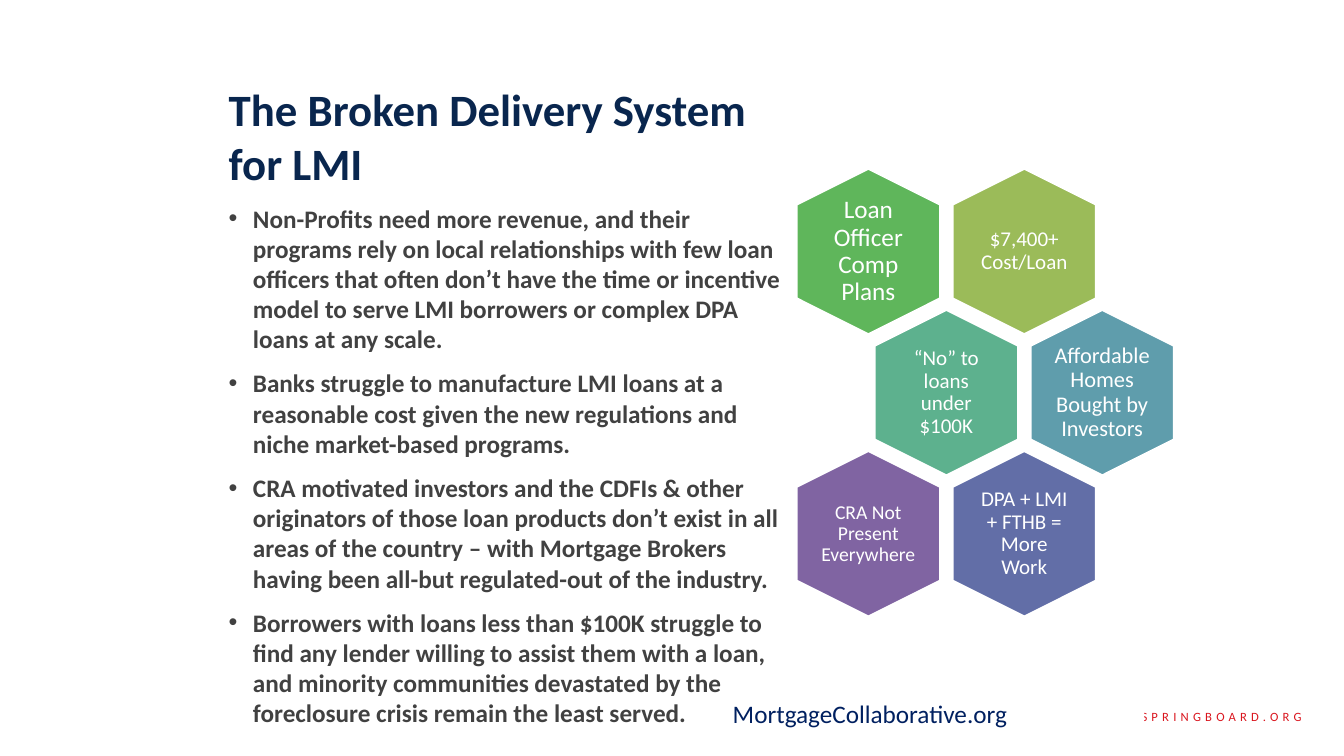
from dataclasses import dataclass

from lxml import etree
from pptx import Presentation
from pptx import util as u
from pptx.dml.color import RGBColor
from pptx.enum import shapes, text
from pptx.oxml.ns import qn

WIDTH, HEIGHT = u.Inches(13.33), u.Inches(7.5)


@dataclass(frozen=True)
class Theme:
    font: str = "Calibri"
    white: str = "FFFFFF"
    navy: str = "09264E"
    gray: str = "414141"
    red: str = "DA151E"
    blue: str = "002060"
    title: int = 32
    body: int = 18
    address: int = 9


THEME = Theme()
TITLE = "The Broken Delivery System for LMI"
POINTS = [
    "Non-Profits need more revenue, and their programs rely on local relationships with few loan officers "
    "that often don’t have the time or incentive model to serve LMI borrowers or complex DPA loans at any scale.",
    "Banks struggle to manufacture LMI loans at a reasonable cost given the new regulations "
    "and niche market-based programs.",
    "CRA motivated investors and the CDFIs & other originators of those loan products don’t exist in all areas "
    "of the country – with Mortgage Brokers having been all-but regulated-out of the industry.",
    "Borrowers with loans less than $100K struggle to find any lender willing to assist them with a loan, "
    "and minority communities devastated by the foreclosure crisis remain the least served.",
]
HEXAGONS = [
    (0, 0, "Loan Officer Comp Plans", 18, "5FB65B", 0),
    (2, 0, "$7,400+ Cost/Loan", 15, "9BBB59", 0.06),
    (1, 1, "“No” to loans under $100K", 15, "5DB18E", 0.06),
    (3, 1, "Affordable Homes Bought by Investors", 16, "5F9DAC", 0),
    (0, 2, "CRA Not Present Everywhere", 14, "8064A2", 0),
    (2, 2, "DPA + LMI + FTHB = More Work", 15, "626EA7", 0.06),
]


def area(left, top, width, height):
    return [round(share * side / 100) for share, side in
            zip((left, top, width, height), (WIDTH, HEIGHT) * 2)]


def centered(x, y, width, height):
    return area(x - width / 2, y - height / 2, width, height)


def add_bullet(para, indent=0.24):
    props = para._p.get_or_add_pPr()
    props.set("marL", str(u.Inches(indent)))
    props.set("indent", str(-u.Inches(indent)))
    font = etree.SubElement(props, qn("a:buFont"))
    font.set("typeface", "Arial")
    etree.SubElement(props, qn("a:buChar")).set("char", "•")


def write(para, words, size, color, bold=False, bullet=False, align=text.PP_ALIGN.LEFT,
          before=0, line=None, tracking=None):
    para.alignment = align
    para.space_before = u.Pt(before)
    if line:
        para.line_spacing = line
    if bullet:
        add_bullet(para)
    span = para.add_run()
    span.text = words
    span.font.name = THEME.font
    span.font.size = u.Pt(size)
    span.font.bold = bold
    span.font.color.rgb = RGBColor.from_string(color)
    if tracking:
        span._r.get_or_add_rPr().set("spc", str(tracking * 100))


def add_text(page, frame, inset=None, anchor=text.MSO_ANCHOR.TOP):
    content = page.shapes.add_textbox(*frame).text_frame
    content.word_wrap = True
    content.vertical_anchor = anchor
    if inset is not None:
        content.margin_left = content.margin_right = u.Inches(inset)
        content.margin_top = content.margin_bottom = u.Inches(inset)
    return content


def add_panel(page, kind, frame, fill):
    panel = page.shapes.add_shape(kind, *frame)
    panel.shadow.inherit = False
    panel.fill.solid()
    panel.fill.fore_color.rgb = RGBColor.from_string(fill)
    panel.line.fill.background()
    return panel


def add_hexagon(page, column, row, words, size, fill, inset):
    x, y = 64.61 + 5.8 * column, 33.27 + 18.67 * row
    hexagon = add_panel(page, shapes.MSO_SHAPE.HEXAGON, centered(x, y, 12.38, 19.07), fill)
    hexagon.adjustments[0] = 0.25
    hexagon.rotation = 90
    hexagon.line.color.rgb = RGBColor.from_string(THEME.white)
    hexagon.line.width = u.Pt(2)
    label = add_text(page, centered(x, y, 7.43, 15.07), inset, text.MSO_ANCHOR.MIDDLE)
    write(label.paragraphs[0], words, size, THEME.white, align=text.PP_ALIGN.CENTER, line=0.9)


def add_body(page):
    body = add_text(page, area(16.28, 10.13, 42.68, 81.33))
    write(body.paragraphs[0], TITLE, THEME.title, THEME.navy, bold=True)
    for point in POINTS:
        write(body.add_paragraph(), point, THEME.body, THEME.gray, bold=True, bullet=True, before=9.8)


def add_footer(page):
    panel = add_panel(page, shapes.MSO_SHAPE.RECTANGLE, area(53.78, 91.73, 31.35, 5.33), THEME.white)
    panel.text_frame.word_wrap = True
    write(panel.text_frame.paragraphs[0], "MortgageCollaborative.org", THEME.body, THEME.blue)


def main():
    deck = Presentation()
    deck.slide_width, deck.slide_height = WIDTH, HEIGHT
    page = deck.slides.add_slide(deck.slide_layouts[6])
    address = add_text(page, area(57.23, 93.07, 40.35, 3.33))
    write(address.paragraphs[0], "SPRINGBOARD.ORG", THEME.address, THEME.red,
          align=text.PP_ALIGN.RIGHT, tracking=3)
    add_body(page)
    for hexagon in HEXAGONS:
        add_hexagon(page, *hexagon)
    add_footer(page)
    deck.save("out.pptx")


if __name__ == "__main__":
    main()
